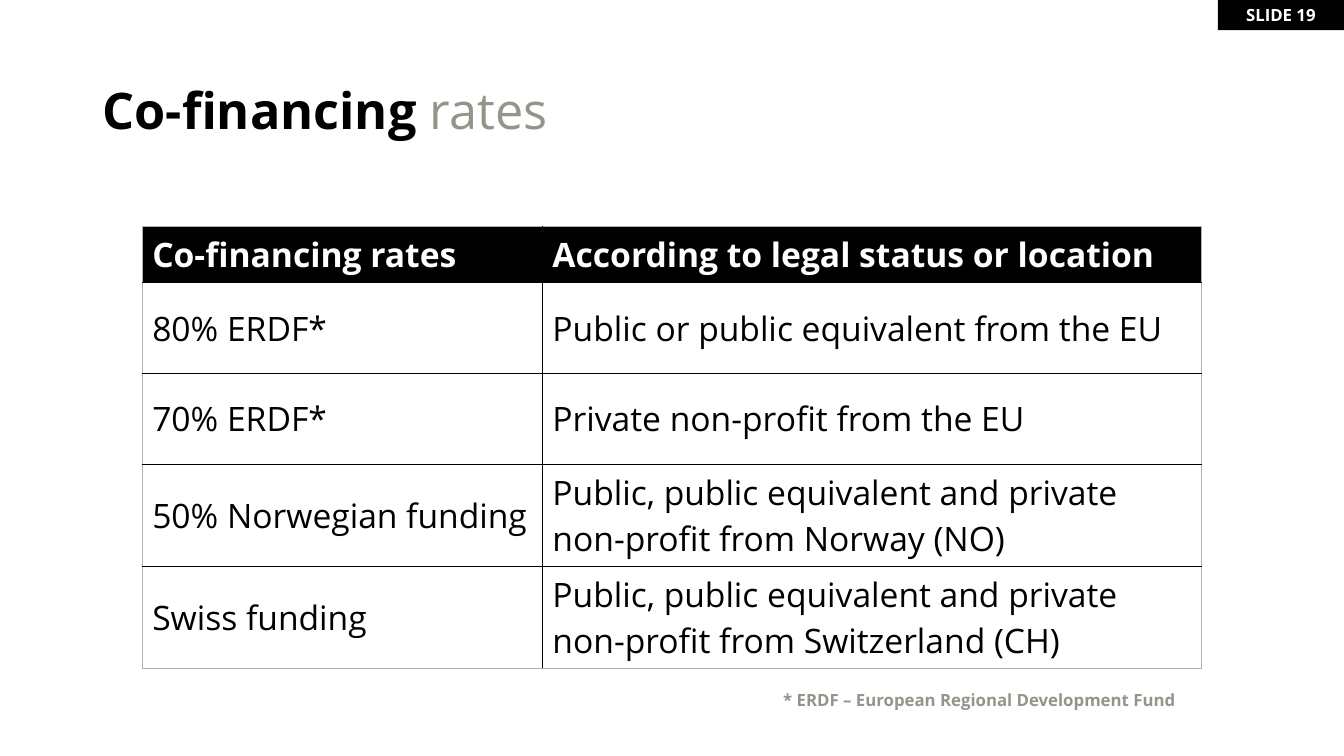
"""Build the slide on co-financing rates by legal status or location."""
from lxml.etree import SubElement
from pptx import Presentation
from pptx.dml.color import RGBColor
from pptx.enum.shapes import MSO_SHAPE as SHAPE
from pptx.enum.text import MSO_ANCHOR as ANCHOR, PP_ALIGN as ALIGN
from pptx.oxml import parse_xml
from pptx.oxml.ns import nsdecls, qn
from pptx.util import Inches, Pt

BLACK = RGBColor(0x00, 0x00, 0x00)
WHITE = RGBColor(0xFF, 0xFF, 0xFF)
GREY = RGBColor(0x95, 0x94, 0x8B)
EDGE = RGBColor(0xB2, 0xB2, 0xB2)

prs = Presentation()
prs.slide_width, prs.slide_height = Inches(13.33), Inches(7.5)
s = prs.slides.add_slide(prs.slide_layouts[6])


def share(x, y, w, h):
    """Turn percentages of the slide's size into lengths."""
    W, H = prs.slide_width, prs.slide_height
    return [int(W * x / 100), int(H * y / 100), int(W * w / 100), int(H * h / 100)]


def write(p, text, size, color, bold):
    """Add one formatted run to a paragraph."""
    r = p.add_run()
    r.text = text
    r.font.color.rgb = color
    for name, value in {"name": "Open Sans", "size": Pt(size), "bold": bold}.items():
        setattr(r.font, name, value)


sp = s.shapes.add_shape(SHAPE.RECTANGLE, *share(90.62, 0, 9.38, 4))
sp.shadow.inherit = False
sp.fill.solid()
sp.fill.fore_color.rgb = BLACK
sp.line.fill.background()
p = sp.text_frame.paragraphs[0]
p.alignment = ALIGN.CENTER
write(p, "SLIDE 19", 12, WHITE, True)

tf = s.shapes.add_textbox(*share(6.9, 5.33, 86.27, 19.33)).text_frame
tf.word_wrap = True
tf.vertical_anchor = ANCHOR.MIDDLE
p = tf.paragraphs[0]
p.line_spacing = 0.9
write(p, "Co-financing ", 36, BLACK, True)
write(p, "rates", 36, GREY, False)

rows = [
    (7.4, "Co-financing rates", "According to legal status or location"),
    (12, "80% ERDF*", "Public or public equivalent from the EU"),
    (12, "70% ERDF*", "Private non-profit from the EU"),
    (13.5, "50% Norwegian funding", "Public, public equivalent and private non-profit from Norway (NO)"),
    (13.5, "Swiss funding", "Public, public equivalent and private non-profit from Switzerland (CH)"),
]
table_height = sum(row[0] for row in rows)
table = s.shapes.add_table(len(rows), 2, *share(10.58, 30, 78.84, table_height)).table
table.first_row = table.horz_banding = False
for col, width in zip(table.columns, (29.78, 49.06)):
    col.width = share(0, 0, width, 0)[2]
for i, (height, *texts) in enumerate(rows):
    header = i == 0
    table.rows[i].height = share(0, 0, 0, height)[3]
    for j, text in enumerate(texts):
        cell = table.cell(i, j)
        if header:
            cell.fill.solid()
            cell.fill.fore_color.rgb = BLACK
        else:
            cell.fill.background()
            cell.vertical_anchor = ANCHOR.MIDDLE
        write(cell.text_frame.paragraphs[0], text, 24, WHITE if header else BLACK, header)
        outer = {"lnL": j == 0, "lnR": j == 1, "lnT": header, "lnB": i == len(rows) - 1}
        for k, (side, on_edge) in enumerate(outer.items()):
            ln = parse_xml(f'<a:{side} {nsdecls("a")} w="{Pt(1)}"/>')
            fill = SubElement(ln, qn("a:solidFill"))
            SubElement(fill, qn("a:srgbClr"), val=str(EDGE if on_edge else BLACK))
            cell._tc.get_or_add_tcPr().insert(k, ln)

tf = s.shapes.add_textbox(*share(57.54, 90.53, 31.06, 4)).text_frame
tf.word_wrap = False
write(tf.paragraphs[0], "* ERDF – European Regional Development Fund", 12, GREY, True)

prs.save("out.pptx")
